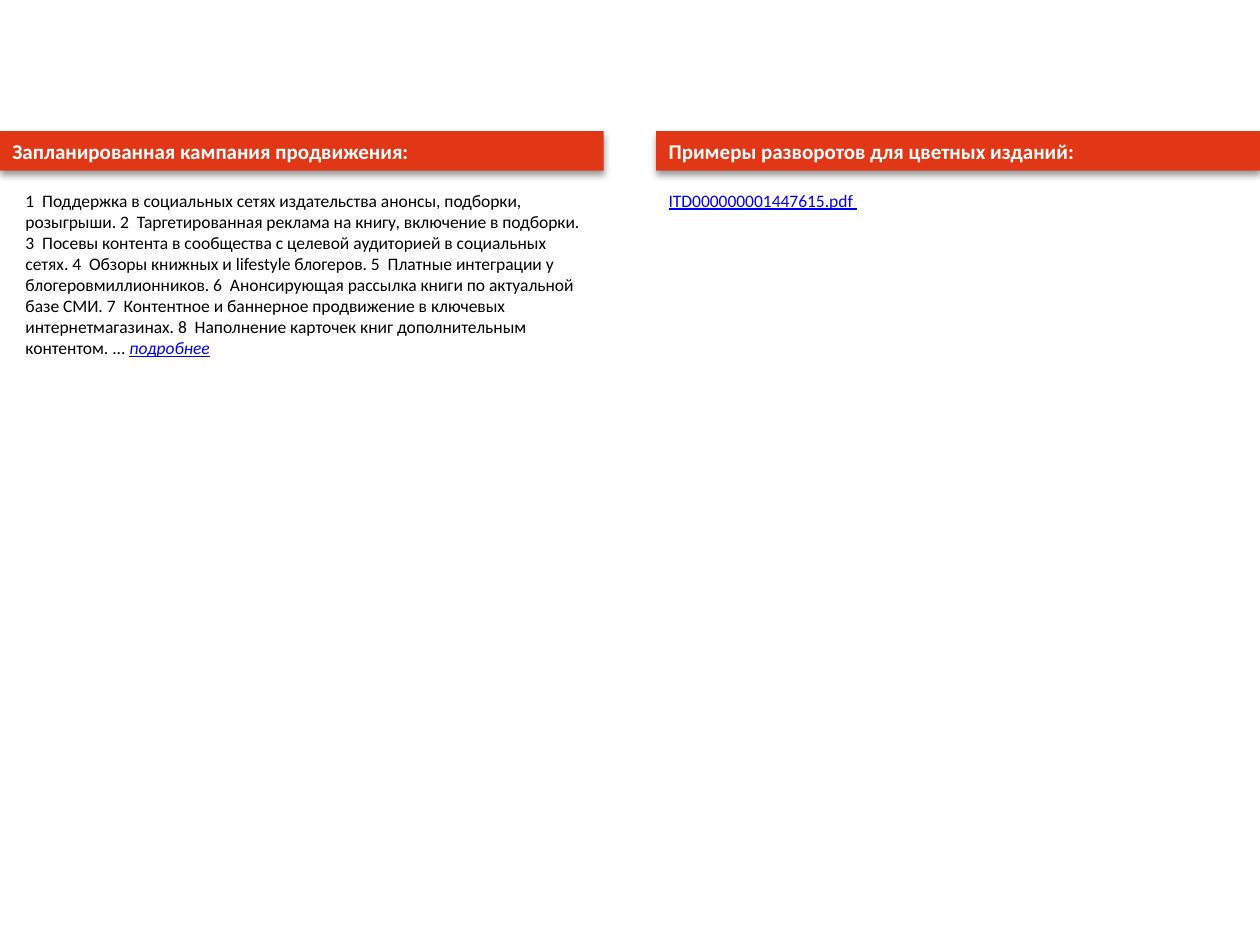
from lxml import etree
from pptx import Presentation
from pptx.dml.color import RGBColor
from pptx.enum.shapes import MSO_SHAPE
from pptx.enum.text import MSO_ANCHOR, PP_ALIGN
from pptx.oxml.ns import qn
from pptx.util import Pt

RECTANGLE = MSO_SHAPE.RECTANGLE
LEFT = PP_ALIGN.LEFT
TOP, MIDDLE = MSO_ANCHOR.TOP, MSO_ANCHOR.MIDDLE

COLORS = {"bar": "E13716", "heading": "FFFFFF", "text": "000000",
          "link": "0000FF", "shadow": "000000"}
FONT = "Calibri"

SLIDE_WIDTH, SLIDE_HEIGHT = 720, 540
BAR_TOP, BAR_WIDTH, BAR_HEIGHT = 75, 345, 22.5
BODY_TOP, BODY_WIDTH, BODY_HEIGHT = 105, 337.5, 75
RIGHT_COLUMN = SLIDE_WIDTH - BAR_WIDTH
BODY_INDENT = 7.5

CAMPAIGN = (
    "1  Поддержка в социальных сетях издательства анонсы, подборки, розыгрыши. "
    "2  Таргетированная реклама на книгу, включение в подборки. "
    "3  Посевы контента в сообщества с целевой аудиторией в социальных сетях. "
    "4  Обзоры книжных и lifestyle блогеров. "
    "5  Платные интеграции у блогеровмиллионников. "
    "6  Анонсирующая рассылка книги по актуальной базе СМИ. "
    "7  Контентное и баннерное продвижение в ключевых интернетмагазинах. "
    "8  Наполнение карточек книг дополнительным контентом. ... "
)


def color(name):
    return RGBColor.from_string(COLORS[name])


def format_run(run, size, color_name, bold=False, italic=False, underline=False):
    font = run.font
    font.name = FONT
    font.size = Pt(size)
    font.color.rgb = color(color_name)
    font.bold, font.italic, font.underline = bold, italic, underline


def add_shadow(shape):
    """Give the shape a soft shadow that falls straight down."""
    shape.shadow.inherit = False
    effects = shape._element.spPr.find(qn("a:effectLst"))
    shadow = etree.SubElement(
        effects, qn("a:outerShdw"), blurRad=str(Pt(3.8)), dist=str(Pt(2.2)),
        dir="5400000", rotWithShape="0")
    shade = etree.SubElement(shadow, qn("a:srgbClr"), val=COLORS["shadow"])
    etree.SubElement(shade, qn("a:alpha"), val="40000")


def add_heading_bar(slide, left, text):
    bar = slide.shapes.add_shape(
        RECTANGLE, Pt(left), Pt(BAR_TOP), Pt(BAR_WIDTH), Pt(BAR_HEIGHT))
    bar.fill.solid()
    bar.fill.fore_color.rgb = color("bar")
    bar.line.fill.background()
    add_shadow(bar)
    text_frame = bar.text_frame
    text_frame.text = text
    text_frame.vertical_anchor = MIDDLE
    paragraph = text_frame.paragraphs[0]
    paragraph.alignment = LEFT
    format_run(paragraph.runs[0], 12, "heading", bold=True)


def add_body(slide, left):
    """Add an empty text box under a heading bar and return its paragraph."""
    box = slide.shapes.add_textbox(
        Pt(left), Pt(BODY_TOP), Pt(BODY_WIDTH), Pt(BODY_HEIGHT))
    text_frame = box.text_frame
    text_frame.word_wrap = True
    text_frame.vertical_anchor = TOP
    return text_frame.paragraphs[0]


def add_run(paragraph, text, color_name, **style):
    run = paragraph.add_run()
    run.text = text
    format_run(run, 10, color_name, **style)


def main():
    presentation = Presentation()
    presentation.slide_width = Pt(SLIDE_WIDTH)
    presentation.slide_height = Pt(SLIDE_HEIGHT)
    slide = presentation.slides.add_slide(presentation.slide_layouts[6])

    add_heading_bar(slide, 0, "Запланированная кампания продвижения:")
    campaign = add_body(slide, BODY_INDENT)
    add_run(campaign, CAMPAIGN, "text")
    add_run(campaign, "подробнее", "link", italic=True, underline=True)

    add_heading_bar(slide, RIGHT_COLUMN, "Примеры разворотов для цветных изданий:")
    samples = add_body(slide, RIGHT_COLUMN)
    add_run(samples, "ITD000000001447615.pdf ", "link", underline=True)

    presentation.save("out.pptx")


if __name__ == "__main__":
    main()
